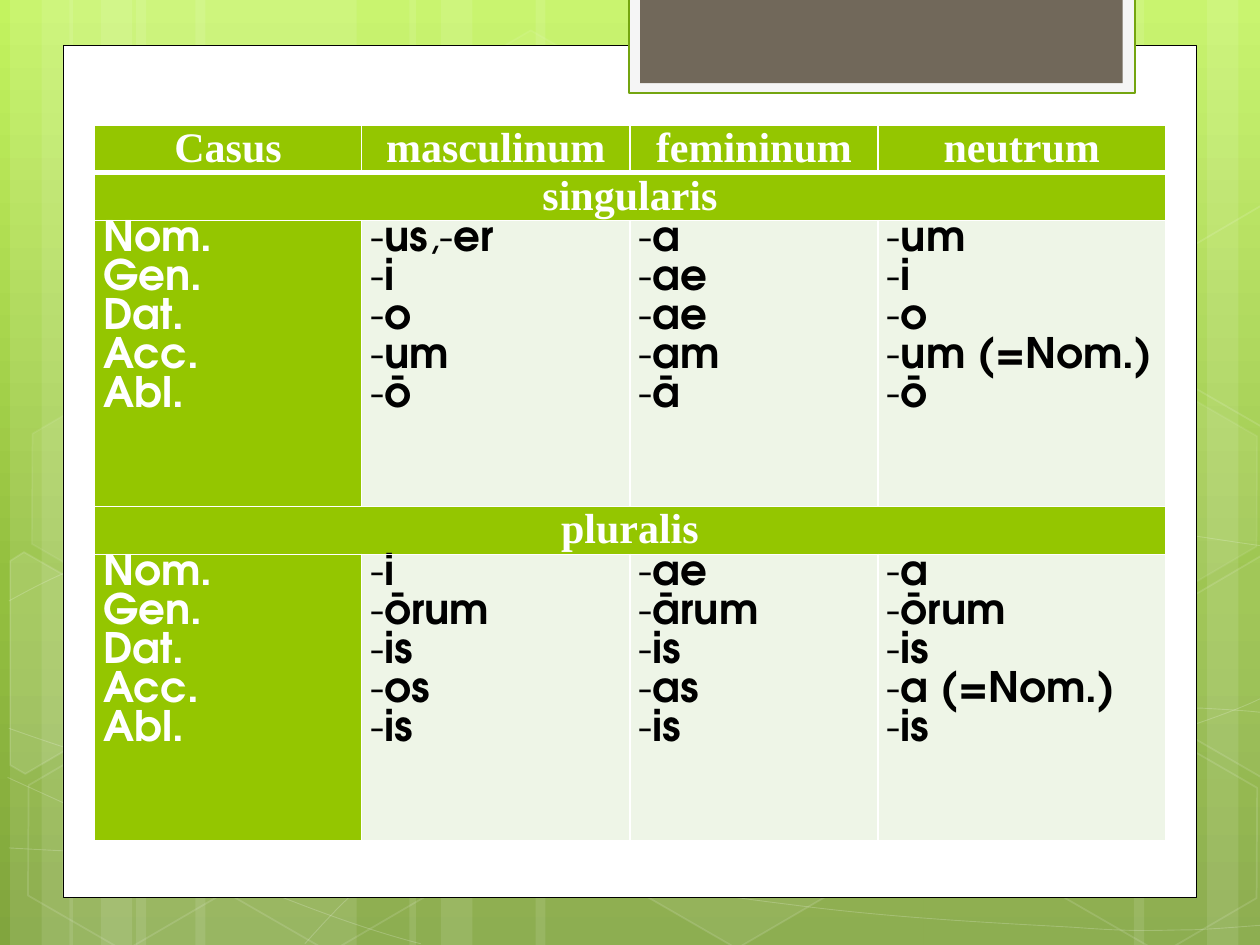
"""Build a slide with a table of Latin case endings on a green backdrop."""
from copy import deepcopy
from itertools import groupby
from math import cos, pi, sin

from lxml.etree import SubElement as Sub
from pptx import Presentation
from pptx.dml.color import RGBColor as RGB
from pptx.enum.shapes import MSO_SHAPE as Kind
from pptx.enum.text import PP_ALIGN as Align
from pptx.oxml import parse_xml
from pptx.oxml.ns import nsdecls, qn
from pptx.util import Inches, Pt

WHITE, GREEN, PALE = "FFFFFF", "94C600", "EEF5E7"


def tint(fill, hue, alpha=100):
    """Fill with one colour, alpha in percent."""
    fill.solid()
    fill.fore_color.rgb = RGB.from_string(hue)
    if alpha < 100:
        color = fill._xPr.find(qn("a:solidFill"))[0]
        Sub(color, qn("a:alpha")).set("val", str(alpha * 1000))


def dress(shape, fill=None, line=None, width=1):
    """Set fill and line, each a tuple of colour and alpha, or none."""
    shape.shadow.inherit = False
    for part, look in ((shape.fill, fill), (shape.line.fill, line)):
        if look:
            tint(part, *look)
        else:
            part.background()
    if line:
        shape.line.width = Pt(width)


deck = Presentation()
deck.slide_width, deck.slide_height = Inches(10), Inches(7.5)
slide = deck.slides.add_slide(deck.slide_layouts[6])
shapes = slide.shapes

back = slide.background.fill
back.gradient()
back.gradient_angle = 270
stops = slide._element.find(".//" + qn("a:gsLst"))
stops.append(deepcopy(stops[-1]))
for stop, hue, place in zip(back.gradient_stops, ("C3F35F", "93BF3F", "81A53E"), (0, 0.62, 1)):
    stop.color.rgb = RGB.from_string(hue)
    stop.position = place

stripes = [
    (1.08, 1.75), (0.08, 0.5), (0.33, 0.83), (1.55, 1.75), (0.55, 0.5), (0.8, 0.83),
    (7.33, 1.75), (9.58, 0.5), (9, 0.83), (4.25, 3.08), (3.25, 0.5), (3.5, 0.83),
]
for left, width in stripes:
    stripe = shapes.add_shape(Kind.RECTANGLE, Inches(left), 0, Inches(width), Inches(7.5))
    dress(stripe, (WHITE, 10))

curves = [
    [(0.07, 6.73), (0.61, 6.76), (1.15, 6.79), (1.9, 6.78), (2.65, 6.77), (3.58, 6.75),
     (4.58, 6.65), (5.58, 6.55), (7, 6.36), (7.92, 6.17), (8.83, 5.98), (9.77, 5.68),
     (10.07, 5.51)],
    [(0.07, 4.77), (0.36, 4.61), (0.65, 4.46), (1.21, 4.31), (1.78, 4.16), (2.59, 3.94),
     (3.47, 3.87), (4.36, 3.8), (5.44, 3.79), (6.54, 3.87), (7.64, 3.95), (9.47, 4.26),
     (10.07, 4.34)],
    [(0.06, 6.17), (1.27, 6.72), (2.47, 7.27), (3.34, 7.49)],
    [(0.07, 5.78), (0.38, 5.89), (0.7, 6), (1.28, 6.16), (1.86, 6.31), (2.73, 6.56),
     (3.57, 6.73), (4.4, 6.9), (5.45, 7.08), (6.28, 7.18), (7.11, 7.29), (8, 7.33),
     (8.53, 7.36), (9.05, 7.4), (9.19, 7.38), (9.45, 7.38), (9.71, 7.37), (9.89, 7.35),
     (10.07, 7.34)],
    [(2.42, 7.49), (2.6, 7.29), (2.78, 7.09), (3.02, 6.91), (3.26, 6.73), (3.6, 6.53),
     (3.88, 6.39), (4.16, 6.25), (4.33, 6.19), (4.7, 6.09), (5.06, 5.99), (5.73, 5.85),
     (6.08, 5.78), (6.44, 5.71), (6.49, 5.71), (6.8, 5.69), (7.11, 5.66), (7.6, 5.63),
     (7.94, 5.62), (8.29, 5.61), (8.86, 5.62), (8.86, 5.62), (8.86, 5.62), (9.53, 5.62),
     (9.53, 5.62), (9.71, 5.63), (9.88, 5.64), (9.97, 5.65), (10.06, 5.66), (10.03, 5.65),
     (10.06, 5.66)],
]
for curve in curves:
    first, *rest = [[Inches(n) for n in dot] for dot in curve]
    pen = shapes.build_freeform(*first)
    pen.add_line_segments(rest, close=False)
    wave = pen.convert_to_shape()
    track = wave._element.find(".//" + qn("a:path"))
    lines = track.findall(qn("a:lnTo"))
    for i in range(0, len(lines), 3):
        bend = Sub(track, qn("a:cubicBezTo"))
        for line in lines[i:i + 3]:
            bend.append(line[0])
            track.remove(line)
    dress(wave, None, (WHITE, 20), 0.5)

combs = [
    (3.34, 0.36, 4, 8), (4.97, 5.89, 6, 12), (0.11, 5.91, 0, 12),
    (0.14, 3.12, 7, 8), (1.74, 5.92, 0, 12), (7.53, 4.53, 10, 12),
    (8.34, 5.93, 0, 12), (8.34, 3.14, 7, 8),
]
for left, top, fill, edge in combs:
    comb = shapes.add_shape(Kind.HEXAGON, Inches(left), Inches(top), Inches(1.75), Inches(1.52))
    comb.adjustments[0] = 0.285
    comb.rotation = 30
    dress(comb, (WHITE, fill) if fill else None, (WHITE, edge))

halves = [
    (10, 0.36, 5.35,
     [(0.08, 4.45), (0.19, 4.38), (0.96, 4.82), (0.95, 5.7), (0.2, 6.14), (0.08, 6.07)]),
    (4, 9.85, 5.2,
     [(9.26, 4.85), (10.01, 4.41), (10.09, 4.46), (10.09, 6.13), (10.02, 6.17), (9.26, 5.73)]),
    (0, 9.85, 2.41,
     [(9.26, 2.07), (10.01, 1.63), (10.1, 1.68), (10.09, 3.35), (10.02, 3.39), (9.26, 2.95)]),
]
cosine, sine = cos(pi / 6), sin(pi / 6)
for fill, mid, half, dots in halves:
    first, *rest = [
        (Inches(mid + (x - mid) * cosine + (y - half) * sine),
         Inches(half - (x - mid) * sine + (y - half) * cosine))
        for x, y in dots]
    pen = shapes.build_freeform(*first)
    pen.add_line_segments(rest)
    comb = pen.convert_to_shape()
    comb.rotation = 30
    dress(comb, (WHITE, fill) if fill else None, (WHITE, 12))

panels = [
    ((0.5, 0.36, 9, 6.76), WHITE, "000000", 0.5),
    ((4.99, -0.02, 4.02, 0.76), "F5F5F5", "74A510", 1.25),
    ((5.08, -0.02, 3.83, 0.68), "71685A", None, 0),
]
for box, fill, line, width in panels:
    panel = shapes.add_shape(Kind.RECTANGLE, *map(Inches, box))
    dress(panel, (fill,), (line,) if line else None, width)

cases = "Nom. Gen. Dat. Acc. Abl.".split()
rows = [
    [["Casus"], ["masculinum"], ["femininum"], ["neutrum"]],
    [["singularis"]],
    [cases, ["-us,-er", "-i", "-o", "-um", "-ō"], ["-a", "-ae", "-ae", "-am", "-ā"],
     ["-um", "-i", "-o", "-um (=Nom.)", "-ō"]],
    [["pluralis"]],
    [cases, ["-i", "-ōrum", "-is", "-os", "-is"], ["-ae", "-ārum", "-is", "-as", "-is"],
     ["-a", "-ōrum", "-is", "-a (=Nom.)", "-is"]],
]
table = shapes.add_table(5, 4, Inches(0.75), Inches(0.99), Inches(8.5), Inches(5.68)).table
table.first_row = table.horz_banding = False
for col, width in zip(table.columns, (2.12, 2.13, 1.97, 2.28)):
    col.width = Inches(width)
for row, height in zip(table.rows, (0.38, 0.38, 2.27, 0.38, 2.27)):
    row.height = Inches(height)

for r, row in enumerate(rows):
    head = r in (0, 1, 3)
    if len(row) == 1:
        table.cell(r, 0).merge(table.cell(r, 3))
    for c in range(4):
        cell = table.cell(r, c)
        cell.margin_left = cell.margin_right = Inches(0.07)
        cell.margin_top = cell.margin_bottom = 0
        tint(cell.fill, GREEN if head or c == 0 else PALE)
        for i, side in enumerate("LRTB"):
            width = Pt(3 if (r, side) in ((0, "B"), (1, "T")) else 1)
            cell._tc.tcPr.insert(i, parse_xml(
                f'<a:ln{side} {nsdecls("a")} w="{width}"><a:solidFill>'
                f'<a:srgbClr val="{WHITE}"/></a:solidFill></a:ln{side}>'))
        if c >= len(row):
            continue
        frame = cell.text_frame
        for i, line in enumerate(row[c]):
            para = frame.add_paragraph() if i else frame.paragraphs[0]
            para.alignment = Align.CENTER if head else Align.JUSTIFY
            if not head:
                para.line_spacing = Pt(22.3)
            for mark, chars in groupby(line, lambda ch: ch in "-,"):
                run = para.add_run()
                run.text = "".join(chars)
                font = run.font
                font.size, font.bold = Pt(24), not mark
                font.name = "Times New Roman" if head else "TeX Gyre Adventor"
                tint(font.fill, WHITE if head or c == 0 else "000000")

deck.save("out.pptx")
